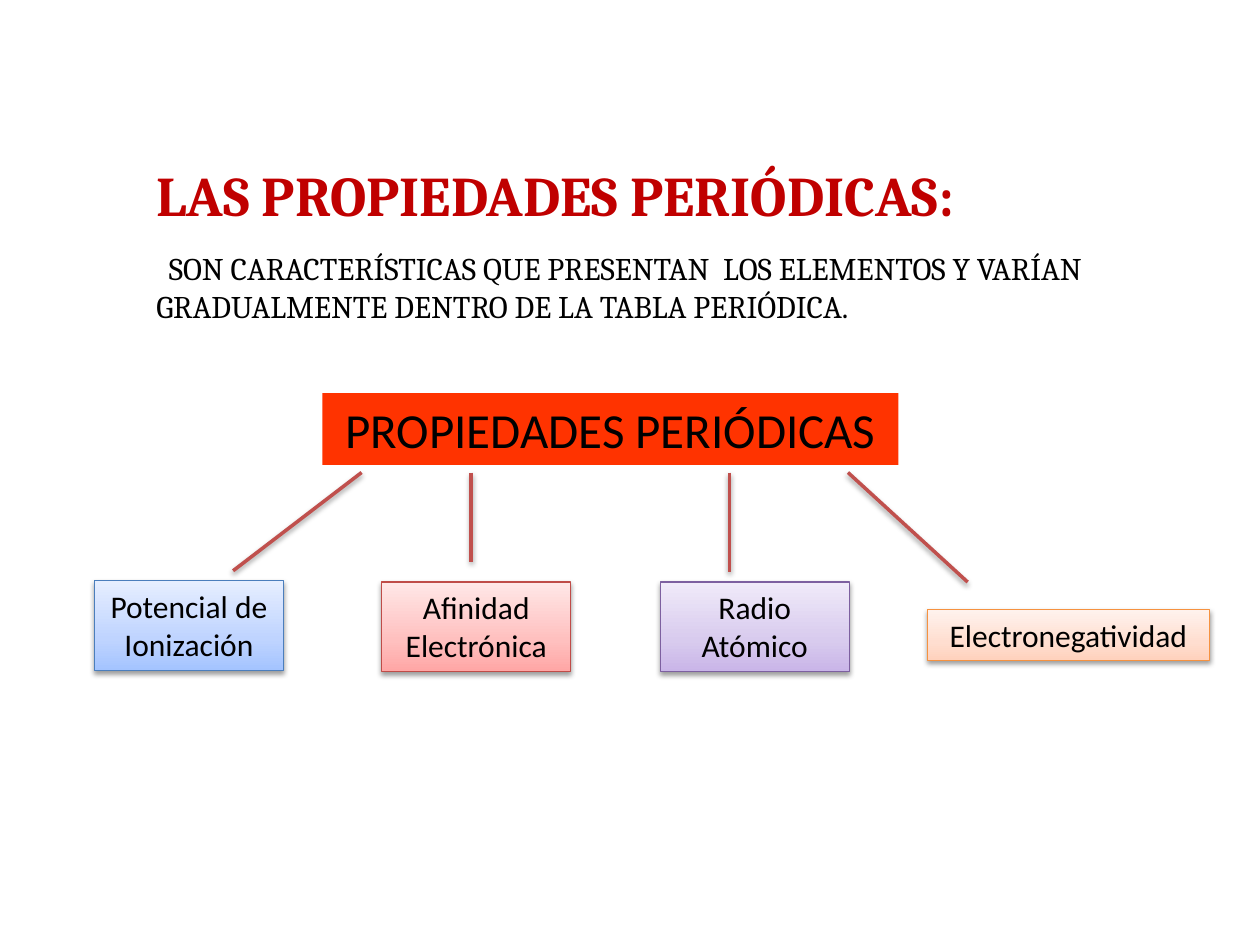
import copy

import pptx
import pptx.dml.color
import pptx.enum.shapes
import pptx.enum.text
import pptx.oxml
import pptx.oxml.ns
import pptx.util
from pptx.util import Inches

RGBColor = pptx.dml.color.RGBColor
BLACK = RGBColor(0x00, 0x00, 0x00)
TITLE_RED = RGBColor(0xC0, 0x00, 0x00)
HEADER_ORANGE = RGBColor(0xFF, 0x33, 0x00)
BRANCH_RED = RGBColor(0xC0, 0x50, 0x4D)
BLUES = [RGBColor.from_string(c) for c in ("A4C4FF", "BFD4FF", "E6EEFF", "4B7EBC")]
REDS = [RGBColor.from_string(c) for c in ("FFA6A5", "FFC0BF", "FFE7E7", "BF4C48")]
PURPLES = [RGBColor.from_string(c) for c in ("C9B5E8", "D8CBEE", "F0EAF9", "7D60A0")]
ORANGES = [RGBColor.from_string(c) for c in ("FFD2BD", "FFDED0", "FFF2ED", "F69240")]

SHADOW_XML = (
    f'<a:effectLst {pptx.oxml.ns.nsdecls("a")}>'
    '<a:outerShdw blurRad="39370" dist="20320" dir="5400000" rotWithShape="0">'
    '<a:srgbClr val="000000"><a:alpha val="38000"/></a:srgbClr>'
    '</a:outerShdw></a:effectLst>'
)


def write(shape, text, font, size, color, align, bold=False):
    """Set one paragraph of top-anchored text and return it."""
    frame = shape.text_frame
    frame.word_wrap = True
    frame.auto_size = pptx.enum.text.MSO_AUTO_SIZE.NONE
    frame.vertical_anchor = pptx.enum.text.MSO_ANCHOR.TOP
    paragraph = frame.paragraphs[0]
    paragraph.alignment = align
    run = paragraph.add_run()
    run.text = text
    run.font.name = font
    run.font.size = pptx.util.Pt(size)
    run.font.bold = bold
    run.font.color.rgb = color
    return paragraph


def add_soft_shadow(shape):
    shape._element.spPr.append(pptx.oxml.parse_xml(SHADOW_XML))


LEFT = pptx.enum.text.PP_ALIGN.LEFT
CENTER = pptx.enum.text.PP_ALIGN.CENTER
RECTANGLE = pptx.enum.shapes.MSO_SHAPE.RECTANGLE

prs = pptx.Presentation()
prs.slide_width, prs.slide_height = Inches(10), Inches(7.5)
slide = prs.slides.add_slide(prs.slide_layouts[1])

# Title and definition
title, definition = slide.placeholders
title.left, title.top, title.width, title.height = (
    Inches(1.14), Inches(1.22), Inches(8.35), Inches(0.7))
write(title, "LAS PROPIEDADES PERIÓDICAS:", "Cambria", 32, TITLE_RED, LEFT, bold=True)

definition.left, definition.top, definition.width, definition.height = (
    Inches(1.14), Inches(1.93), Inches(8.35), Inches(0.8))
sentence = write(
    definition,
    "SON CARACTERÍSTICAS QUE PRESENTAN  LOS ELEMENTOS Y VARÍAN "
    "GRADUALMENTE DENTRO DE LA TABLA PERIÓDICA.",
    "Cambria", 18, BLACK, LEFT)
sentence.space_before = pptx.util.Pt(0)
properties = sentence._p.get_or_add_pPr()
properties.set("marL", "0")
properties.set("indent", str(Inches(0.1)))
properties.append(pptx.oxml.parse_xml(f'<a:buNone {pptx.oxml.ns.nsdecls("a")}/>'))

# Root of the diagram
root = slide.shapes.add_shape(
    RECTANGLE, Inches(2.56), Inches(3.12), Inches(4.57), Inches(0.57))
root.shadow.inherit = False
root.fill.solid()
root.fill.fore_color.rgb = HEADER_ORANGE
root.line.fill.background()
write(root, "PROPIEDADES PERIÓDICAS", "Calibri", 28, BLACK, CENTER)

# Properties: text, left, top, width, height, colours (three stops and outline)
properties_shown = [
    ("Potencial de Ionización", 0.75, 4.61, 1.5, 0.71, BLUES),
    ("Afinidad Electrónica", 3.03, 4.62, 1.5, 0.71, REDS),
    ("Radio Atómico", 5.24, 4.62, 1.5, 0.71, PURPLES),
    ("Electronegatividad", 7.36, 4.84, 2.24, 0.4, ORANGES),
]
for text, left, top, width, height, (*stop_colors, outline) in properties_shown:
    box = slide.shapes.add_shape(
        RECTANGLE, Inches(left), Inches(top), Inches(width), Inches(height))
    box.fill.gradient()
    box.fill.gradient_angle = 90
    stop_list = box._element.spPr.find(".//" + pptx.oxml.ns.qn("a:gsLst"))
    stop_list.append(copy.deepcopy(stop_list[0]))
    for stop, position, color in zip(box.fill.gradient_stops, (0, 0.35, 1), stop_colors):
        stop.position = position
        stop.color.rgb = color
    box.line.color.rgb = outline
    box.line.width = pptx.util.Pt(0.75)
    add_soft_shadow(box)
    write(box, text, "Calibri", 18, BLACK, CENTER)

# Branches: start x, end x, end y
BRANCH_TOP = 3.75
for start_x, end_x, end_y in [
    (2.87, 1.85, 4.53), (6.73, 7.68, 4.62), (3.74, 3.74, 4.46), (5.79, 5.79, 4.54),
]:
    branch = slide.shapes.add_connector(
        pptx.enum.shapes.MSO_CONNECTOR.STRAIGHT,
        Inches(start_x), Inches(BRANCH_TOP), Inches(end_x), Inches(end_y))
    branch.line.color.rgb = BRANCH_RED
    branch.line.width = pptx.util.Pt(2)
    add_soft_shadow(branch)

prs.save("out.pptx")
